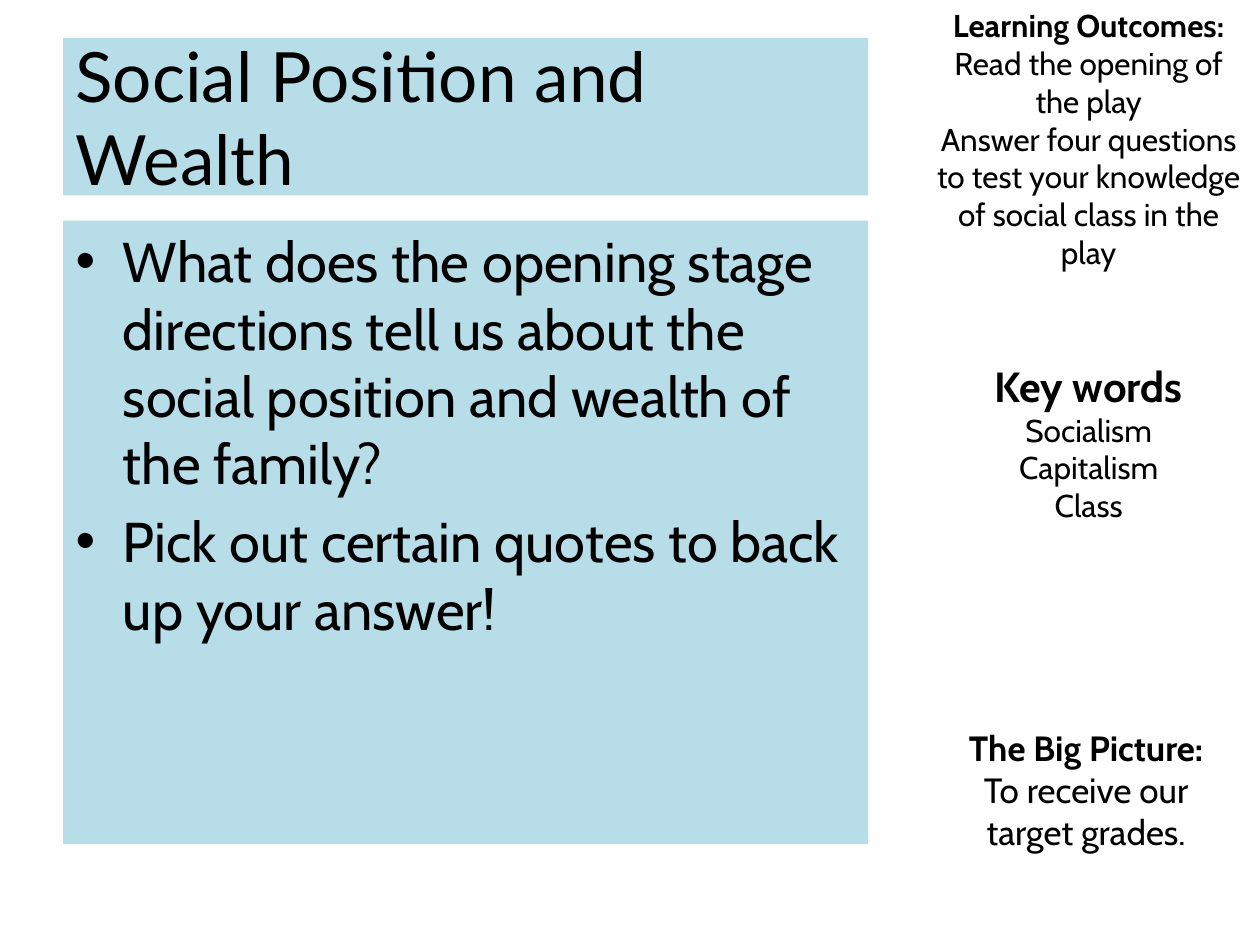
from pptx import Presentation
from pptx.dml.color import RGBColor
from pptx.enum.text import MSO_ANCHOR, MSO_AUTO_SIZE, PP_ALIGN
from pptx.util import Inches, Pt

COLOURS = {"panel": "B7DEE8", "text": "000000"}

presentation = Presentation()
presentation.slide_width = Inches(10)
presentation.slide_height = Inches(7.5)
slide = presentation.slides.add_slide(presentation.slide_layouts[1])
title, body = slide.placeholders

# Two columns: the lesson panels on the left, the side notes on the right
PANEL_LEFT, PANEL_WIDTH = 0.5, 6.39
NOTE_LEFT, NOTE_WIDTH = 7.28, 2.72


def write(frame, text, size, font="Cabin", bold=False, align=PP_ALIGN.LEFT):
    """Fill the empty first paragraph of the frame, or append a new one."""
    paragraph = frame.paragraphs[0] if not frame.text else frame.add_paragraph()
    paragraph.alignment = align
    run = paragraph.add_run()
    run.text = text
    run.font.name = font
    run.font.size = Pt(size)
    run.font.bold = bold
    run.font.color.rgb = RGBColor.from_string(COLOURS["text"])
    return paragraph


for panel, top, height in ((title, 0.3, 1.25), (body, 1.75, 4.95)):
    panel.left, panel.top = Inches(PANEL_LEFT), Inches(top)
    panel.width, panel.height = Inches(PANEL_WIDTH), Inches(height)
    panel.fill.solid()
    panel.fill.fore_color.rgb = RGBColor.from_string(COLOURS["panel"])
    panel.text_frame.auto_size = MSO_AUTO_SIZE.NONE

title.text_frame.vertical_anchor = MSO_ANCHOR.MIDDLE
write(title.text_frame, "Social Position and Wealth", 39.6, font="Lato")

questions = (
    "What does the opening stage directions tell us about the social position and wealth of the family?",
    "Pick out certain quotes to back up your answer!",
)
for index, question in enumerate(questions):
    paragraph = write(body.text_frame, question, 32)
    if index == 0:
        paragraph.space_before = Pt(0)

# Left, top, width, height, heading, heading size, line size, lines
notes = (
    (7.36, 5.72, 2.52, 1.11, "The Big Picture:", 20, 20,
     ("To receive our target grades.",)),
    (NOTE_LEFT, 0, NOTE_WIDTH, 2.68, "Learning Outcomes:", 18, 18,
     ("Read the opening of the play",
      "Answer four questions to test your knowledge of social class in the play")),
    (NOTE_LEFT, 2.81, NOTE_WIDTH, 1.41, "Key words", 24, 18,
     ("Socialism", "Capitalism", "Class")),
)
for left, top, width, height, heading, heading_size, line_size, lines in notes:
    box = slide.shapes.add_textbox(Inches(left), Inches(top), Inches(width), Inches(height))
    frame = box.text_frame
    frame.word_wrap = True
    frame.auto_size = MSO_AUTO_SIZE.SHAPE_TO_FIT_TEXT
    write(frame, heading, heading_size, bold=True, align=PP_ALIGN.CENTER)
    for line in lines:
        write(frame, line, line_size, align=PP_ALIGN.CENTER)

presentation.save("out.pptx")
